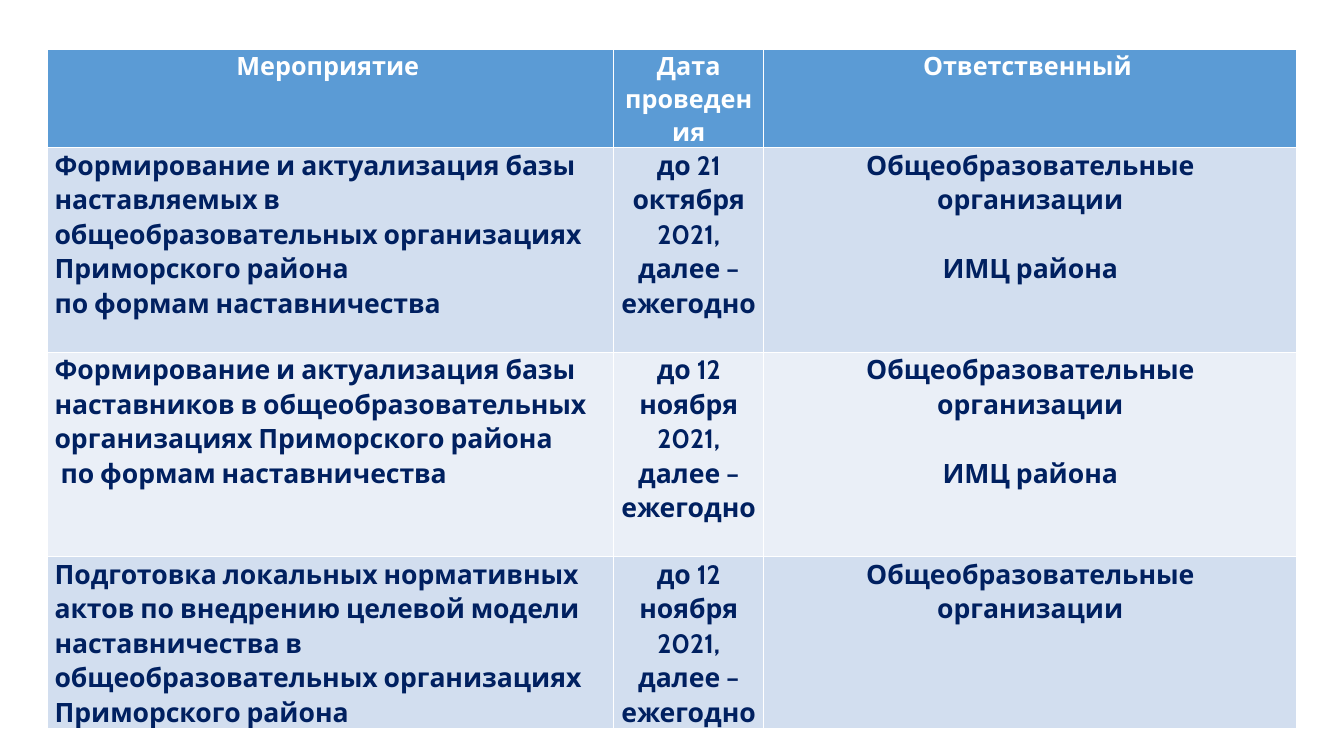
"""Build a slide with the mentoring programme schedule as a table."""
from dataclasses import dataclass

from lxml import etree
from pptx import Presentation
from pptx.dml.color import RGBColor
from pptx.enum.text import PP_ALIGN
from pptx.oxml.ns import qn
from pptx.util import Pt

LEFT, CENTER = PP_ALIGN.LEFT, PP_ALIGN.CENTER
WHITE = RGBColor(0xFF, 0xFF, 0xFF)
NAVY = RGBColor(0x00, 0x20, 0x60)
HEADER_BLUE = RGBColor(0x5B, 0x9B, 0xD5)
BAND_DARK = RGBColor(0xD2, 0xDE, 0xEF)
BAND_LIGHT = RGBColor(0xEA, 0xEF, 0xF7)
FONT = "Cabin"
LINE_SPACING = 1.07
GROUP_GAP = Pt(24.6)
SIDE_INSET = Pt(5)
BORDER_WIDTH = Pt(1)
COLUMN_WIDTHS = (Pt(404.5), Pt(107), Pt(381))
TABLE_LEFT, TABLE_TOP = Pt(34), Pt(35)


@dataclass(frozen=True)
class ScheduleRow:
    """One row: activity, date and those responsible, with its look."""
    activity: str
    date: str
    responsible: str
    height: Pt
    fill: RGBColor
    color: RGBColor = NAVY
    size: Pt = Pt(19)
    activity_align: PP_ALIGN = LEFT


SCHOOLS = "Общеобразовательные организации"
SCHOOLS_AND_CENTRE = f"{SCHOOLS}\nИМЦ района"
NOVEMBER = "до 12 ноября\n2021, далее – ежегодно"
SCHEDULE = (
    ScheduleRow("Мероприятие ", "Дата проведения", "Ответственный ",
                Pt(55.5), HEADER_BLUE, WHITE, Pt(18), CENTER),
    ScheduleRow("Формирование и актуализация базы наставляемых в "
                "общеобразовательных организациях Приморского района\n"
                "по формам наставничества",
                "до 21 октября 2021, далее – ежегодно",
                SCHOOLS_AND_CENTRE, Pt(146), BAND_DARK),
    ScheduleRow("Формирование и актуализация базы наставников в "
                "общеобразовательных организациях Приморского района\n"
                " по формам наставничества",
                NOVEMBER, SCHOOLS_AND_CENTRE, Pt(146), BAND_LIGHT),
    ScheduleRow("Подготовка локальных нормативных актов по внедрению целевой "
                "модели наставничества в общеобразовательных организациях "
                "Приморского района",
                NOVEMBER, SCHOOLS, Pt(116.5), BAND_DARK),
)


def draw_borders(cell) -> None:
    """Give all four sides of a cell a thin white line."""
    properties = cell._tc.get_or_add_tcPr()
    for position, side in enumerate(("lnL", "lnR", "lnT", "lnB")):
        line = etree.Element(qn(f"a:{side}"), w=str(BORDER_WIDTH))
        fill = etree.SubElement(line, qn("a:solidFill"))
        etree.SubElement(fill, qn("a:srgbClr"), val=str(WHITE))
        properties.insert(position, line)


def fill_cell(cell, text: str, row: ScheduleRow, align: PP_ALIGN, gap: Pt) -> None:
    """Write and format one cell, leaving a gap before later paragraphs."""
    cell.fill.solid()
    cell.fill.fore_color.rgb = row.fill
    cell.margin_left = cell.margin_right = SIDE_INSET
    cell.margin_top = cell.margin_bottom = 0
    draw_borders(cell)
    cell.text_frame.text = text
    for number, paragraph in enumerate(cell.text_frame.paragraphs):
        paragraph.alignment = align
        paragraph.line_spacing = LINE_SPACING
        paragraph.space_before = gap if number else Pt(0)
        for run in paragraph.runs:
            run.font.name = FONT
            run.font.size = row.size
            run.font.bold = True
            run.font.color.rgb = row.color


def draw_schedule(slide) -> None:
    """Add the schedule table to the slide."""
    schedule = slide.shapes.add_table(
        len(SCHEDULE), len(COLUMN_WIDTHS), TABLE_LEFT, TABLE_TOP,
        sum(COLUMN_WIDTHS), sum(row.height for row in SCHEDULE)).table
    for column, width in zip(schedule.columns, COLUMN_WIDTHS):
        column.width = width
    for table_row, row in zip(schedule.rows, SCHEDULE):
        table_row.height = row.height
        activity, date, responsible = table_row.cells
        fill_cell(activity, row.activity, row, row.activity_align, Pt(0))
        fill_cell(date, row.date, row, CENTER, Pt(0))
        fill_cell(responsible, row.responsible, row, CENTER, GROUP_GAP)


def main() -> None:
    """Create and save the presentation."""
    presentation = Presentation()
    presentation.slide_width, presentation.slide_height = Pt(960), Pt(540)
    slide = presentation.slides.add_slide(presentation.slide_layouts[6])
    slide.background.fill.solid()
    slide.background.fill.fore_color.rgb = WHITE
    draw_schedule(slide)
    presentation.save("out.pptx")


if __name__ == "__main__":
    main()
